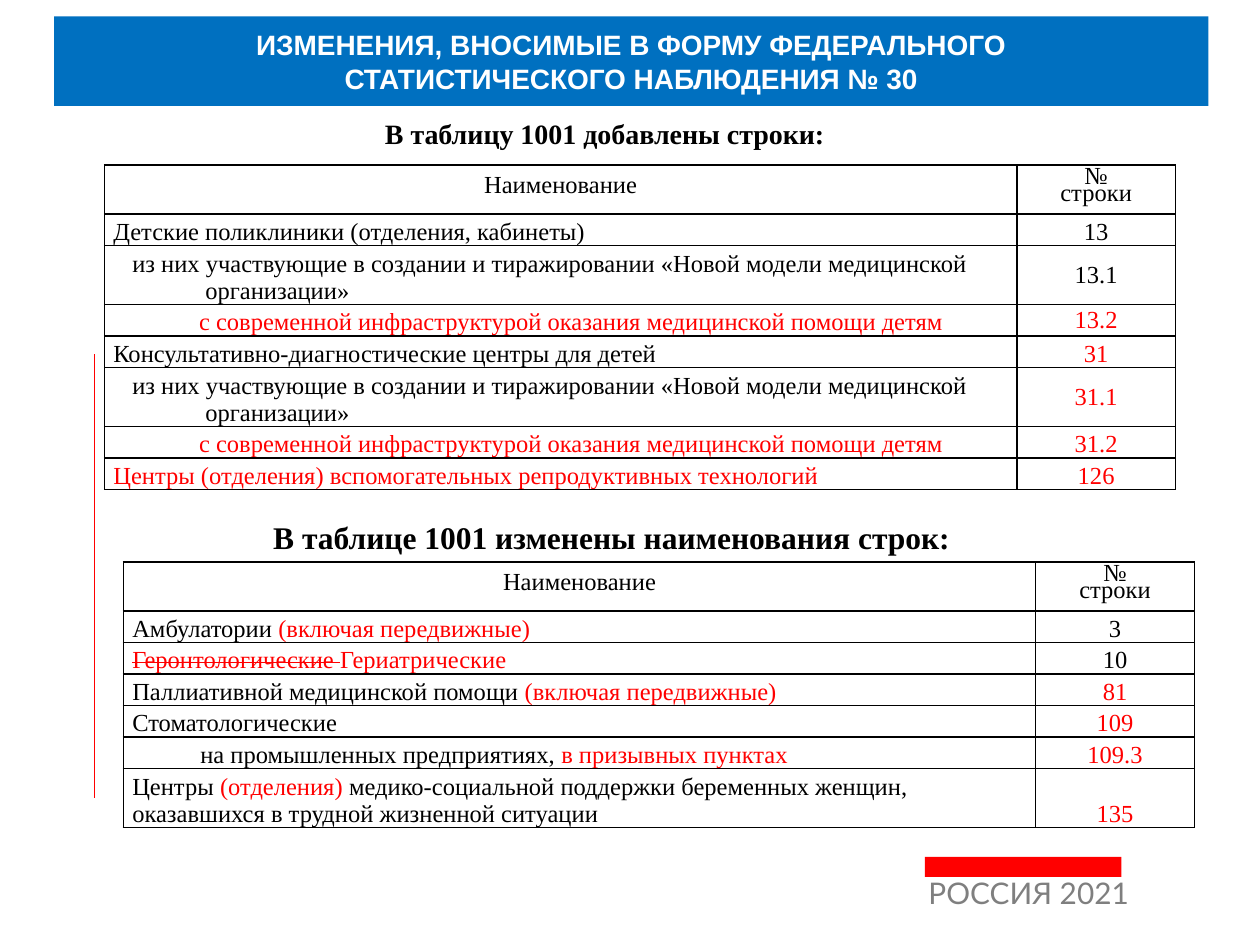
import pptx
import pptx.util
import pptx.dml.color
import pptx.oxml
import pptx.oxml.ns
from pptx.enum.shapes import MSO_CONNECTOR, MSO_SHAPE
from pptx.enum.text import MSO_ANCHOR, PP_ALIGN
from pptx.util import Inches, Pt

BLACK, RED, BLUE, WHITE, GRAY = "000000", "FF0000", "0070C0", "FFFFFF", "7F7F7F"
SERIF = "Times New Roman"
MID, LOW = MSO_ANCHOR.MIDDLE, MSO_ANCHOR.BOTTOM

TITLE = "ИЗМЕНЕНИЯ, ВНОСИМЫЕ В ФОРМУ ФЕДЕРАЛЬНОГО\nСТАТИСТИЧЕСКОГО НАБЛЮДЕНИЯ № 30"
HEADS = ("Наименование", "№\vстроки")

# A line is (indent, runs); a run is (text, colour) with an optional strike flag.
MODEL = [
    (0.15, [("из них участвующие в создании и тиражировании «Новой модели медицинской", BLACK)]),
    (0.73, [("организации»", BLACK)]),
]
MODERN = [(0.68, [("с современной инфраструктурой оказания медицинской помощи детям", RED)])]

# A row is (lines, number, number colour, number anchor, height).
ADDED = [
    ([(0, [("Детские поликлиники (отделения, кабинеты)", BLACK)])], "13", BLACK, LOW, 0.25),
    (MODEL, "13.1", BLACK, MID, 0.43),
    (MODERN, "13.2", RED, MID, 0.25),
    ([(0, [("Консультативно-диагностические центры для детей", BLACK)])], "31", RED, LOW, 0.25),
    (MODEL, "31.1", RED, MID, 0.43),
    (MODERN, "31.2", RED, LOW, 0.25),
    ([(0, [("Центры (отделения) вспомогательных репродуктивных технологий", RED)])],
     "126", RED, LOW, 0.25),
]
RENAMED = [
    ([(0, [("Амбулатории ", BLACK), ("(включая передвижные)", RED)])], "3", BLACK, LOW, 0.25),
    ([(0, [("Геронтологические ", RED, True), ("Гериатрические", RED)])], "10", BLACK, LOW, 0.25),
    ([(0, [("Паллиативной медицинской помощи ", BLACK), ("(включая передвижные)", RED)])],
     "81", RED, LOW, 0.25),
    ([(0, [("Стоматологические", BLACK)])], "109", RED, LOW, 0.25),
    ([(0.54, [("на промышленных предприятиях, ", BLACK), ("в призывных пунктах", RED)])],
     "109.3", RED, LOW, 0.25),
    ([(0, [("Центры ", BLACK), ("(отделения) ", RED),
           ("медико-социальной поддержки беременных женщин, "
            "оказавшихся в трудной жизненной ситуации", BLACK)])], "135", RED, LOW, 0.46),
]
# Heading, its box and size, then table left, top and rows.
PARTS = [
    ("В таблицу 1001 добавлены строки:", (0.98, 0.82, 7.64, 0.48), 16, 0.83, 1.31, ADDED),
    ("В таблице 1001 изменены наименования строк:", (2.01, 4.06, 5.69, 0.4), 18,
     0.98, 4.46, RENAMED),
]
COLS = (7.24, 1.26)
HEAD_H = 0.39


def rgb(code):
    return pptx.dml.color.RGBColor.from_string(code)


def style(run, size, color, font=SERIF, bold=False):
    run.font.size, run.font.name, run.font.bold = Pt(size), font, bold
    run.font.color.rgb = rgb(color)


def write(frame, text, size, color, font=SERIF, bold=False, align=PP_ALIGN.CENTER):
    """Fill a text frame with evenly styled paragraphs."""
    frame.text = text
    for para in frame.paragraphs:
        para.alignment = align
        for run in para.runs:
            style(run, size, color, font, bold)


def fill_lines(frame, lines):
    """Write indented lines made of coloured, optionally struck runs."""
    for i, (indent, runs) in enumerate(lines):
        para = frame.add_paragraph() if i else frame.paragraphs[0]
        para.alignment = PP_ALIGN.LEFT
        if indent:
            para._p.get_or_add_pPr().set("marL", str(Inches(indent)))
        for text, color, *strike in runs:
            run = para.add_run()
            run.text = text
            style(run, 14, color)
            if strike:
                run._r.get_or_add_rPr().set("strike", "sngStrike")


def frame_cell(cell, anchor, side):
    """Set margins, anchor, black borders and no fill."""
    cell.margin_left = cell.margin_right = Inches(side)
    cell.margin_top = cell.margin_bottom = 0
    cell.vertical_anchor = anchor
    props = cell._tc.get_or_add_tcPr()
    for edge in ("lnL", "lnR", "lnT", "lnB"):
        props.append(pptx.oxml.parse_xml(
            f'<a:{edge} {pptx.oxml.ns.nsdecls("a")} w="{Pt(1)}"><a:solidFill>'
            f'<a:srgbClr val="{BLACK}"/></a:solidFill></a:{edge}>'))
    cell.fill.background()


def add_grid(slide, left, top, rows):
    heights = [HEAD_H] + [row[-1] for row in rows]
    table = slide.shapes.add_table(
        len(heights), len(COLS), Inches(left), Inches(top),
        Inches(sum(COLS)), Inches(sum(heights))).table
    for col, width in zip(table.columns, COLS):
        col.width = Inches(width)
    for row, height in zip(table.rows, heights):
        row.height = Inches(height)
    for c, text in enumerate(HEADS):
        cell = table.cell(0, c)
        frame_cell(cell, MID, 0.06)
        write(cell.text_frame, text, 14, BLACK)
        cell.text_frame.paragraphs[0].line_spacing = Pt(10)
    for r, (lines, number, color, anchor, _) in enumerate(rows, 1):
        name, code = table.cell(r, 0), table.cell(r, 1)
        frame_cell(name, LOW, 0.07)
        fill_lines(name.text_frame, lines)
        frame_cell(code, anchor, 0.07)
        write(code.text_frame, number, 14, color)


def add_text(slide, box, anchor, *args, **more):
    frame = slide.shapes.add_textbox(*map(Inches, box)).text_frame
    frame.word_wrap, frame.vertical_anchor = True, anchor
    write(frame, *args, **more)
    return frame


def main():
    deck = pptx.Presentation()
    deck.slide_width, deck.slide_height = Inches(10), Inches(7.5)
    slide = deck.slides.add_slide(deck.slide_layouts[5])

    title = slide.shapes.title
    title.left, title.top, title.width, title.height = map(Inches, (0.43, 0.13, 9.16, 0.71))
    title.fill.solid()
    title.fill.fore_color.rgb = rgb(BLUE)
    title.text_frame.vertical_anchor = MID
    write(title.text_frame, TITLE, 16, WHITE, "Arial", True)

    foot = add_text(slide, (7.27, 6.95, 1.88, 0.47), MSO_ANCHOR.TOP,
                    "РОССИЯ 2021", 17, GRAY, "Lato", align=PP_ALIGN.LEFT)
    foot.paragraphs[0].line_spacing = 0.8

    bar = slide.shapes.add_shape(MSO_SHAPE.RECTANGLE, *map(Inches, (7.34, 6.8, 1.56, 0.16)))
    bar.shadow.inherit = False
    bar.fill.solid()
    bar.fill.fore_color.rgb = rgb(RED)
    bar.line.fill.background()

    rule = slide.shapes.add_connector(
        MSO_CONNECTOR.STRAIGHT, *map(Inches, (0.75, 2.81, 0.75, 6.33)))
    rule.line.color.rgb, rule.line.width = rgb(RED), Pt(0.75)
    rule._element.spPr.append(pptx.oxml.parse_xml(
        f'<a:effectLst {pptx.oxml.ns.nsdecls("a")}/>'))

    for head, box, size, left, top, rows in PARTS:
        add_text(slide, box, MID, head, size, BLACK, bold=True)
        add_grid(slide, left, top, rows)

    deck.save("out.pptx")


if __name__ == "__main__":
    main()
